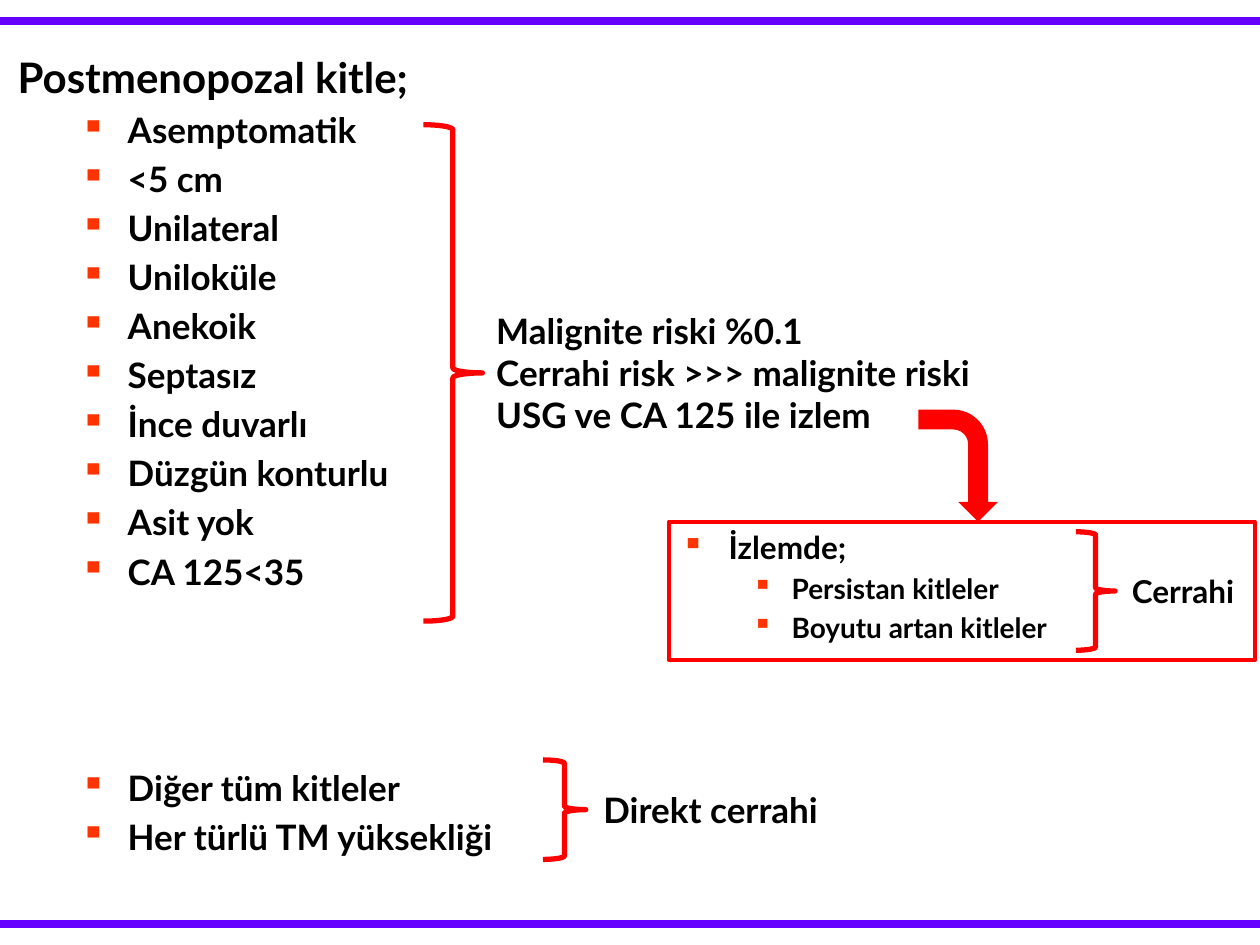
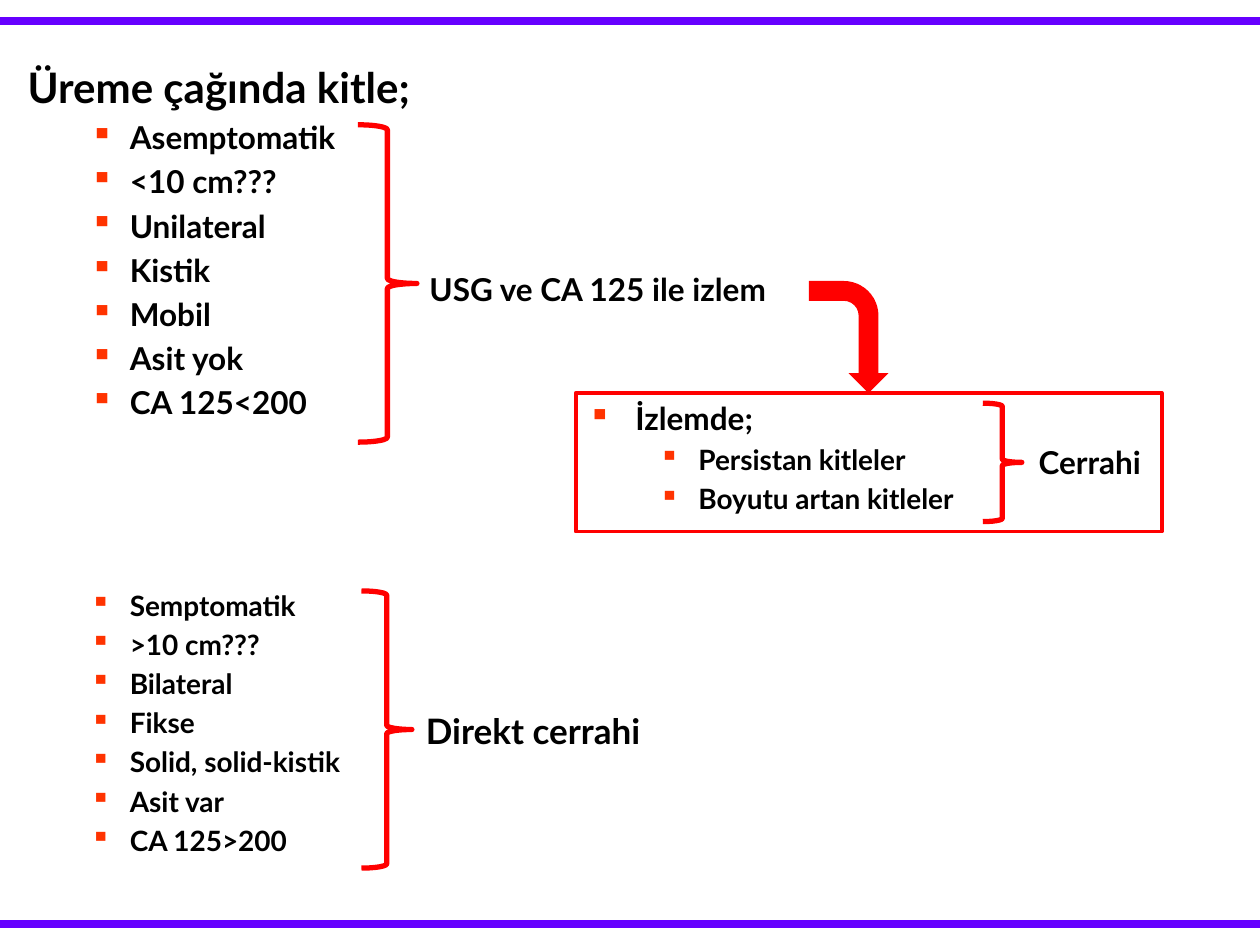
from lxml.etree import SubElement
from pptx import Presentation
from pptx.dml.color import RGBColor
from pptx.enum.shapes import MSO_CONNECTOR, MSO_SHAPE
from pptx.enum.text import MSO_ANCHOR, MSO_AUTO_SIZE, PP_ALIGN
from pptx.oxml.ns import qn
from pptx.util import Pt

SLIDE_WIDTH, SLIDE_HEIGHT = 720, 540
BAND, ACCENT, BULLET, INK = "6600FF", "FF0000", "FF3300", "000000"
TITLE_SIZE = 24
FRAME_FORMAT = {
    "word_wrap": True,
    "auto_size": MSO_AUTO_SIZE.NONE,
    "vertical_anchor": MSO_ANCHOR.TOP,
    "margin_left": Pt(7.2),
    "margin_right": Pt(7.2),
    "margin_top": Pt(3.6),
    "margin_bottom": Pt(3.6),
}
FONT_FORMAT = {"name": "Lato", "bold": True}


def colour(hex_value):
    return RGBColor.from_string(hex_value)


def apply(target, values):
    for name, value in values.items():
        setattr(target, name, value)


def points(*lengths):
    return [Pt(length) for length in lengths]


def write(paragraph, text, size):
    run = paragraph.add_run()
    run.text = text
    apply(run.font, {**FONT_FORMAT, "size": Pt(size)})
    run.font.color.rgb = colour(INK)
    paragraph.alignment = PP_ALIGN.LEFT


def add_bullet(paragraph, indent, hanging):
    properties = paragraph._p.get_or_add_pPr()
    properties.set("marL", str(Pt(indent)))
    properties.set("indent", str(-Pt(hanging)))
    bullet_colour = SubElement(properties, qn("a:buClr"))
    SubElement(bullet_colour, qn("a:srgbClr"), val=BULLET)
    SubElement(properties, qn("a:buChar"), char="▪")


def fill_lines(frame, lines):
    apply(frame, FRAME_FORMAT)
    for index, (text, size, level, bullet) in enumerate(lines):
        paragraph = frame.paragraphs[0] if index == 0 else frame.add_paragraph()
        write(paragraph, text, size)
        paragraph.level = level
        if bullet:
            paragraph.space_before = Pt(size * 0.2)
            add_bullet(paragraph, *bullet)


def add_bands(slide):
    for y in (12.2, SLIDE_HEIGHT - 12.2):
        band = slide.shapes.add_connector(
            MSO_CONNECTOR.STRAIGHT, *points(0, y, SLIDE_WIDTH, y))
        band.line.color.rgb = colour(BAND)
        band.line.width = Pt(4.5)
        SubElement(band._element.spPr, qn("a:effectLst"))


def add_title(slide, text, left, top, width):
    title = slide.shapes.title
    height = TITLE_SIZE * 1.2 + 7.2
    apply(title, dict(zip(("left", "top", "width", "height"),
                          points(left, top, width, height))))
    fill_lines(title.text_frame, [(text, TITLE_SIZE, 0, None)])


def add_list(slide, items, size, bullet, bounds):
    criteria = slide.shapes.add_textbox(*points(*bounds))
    fill_lines(criteria.text_frame, [(item, size, 0, bullet) for item in items])


def add_label(slide, lines, size, bounds):
    label = slide.shapes.add_textbox(*points(*bounds))
    fill_lines(label.text_frame, [(line, size, 0, None) for line in lines])


def add_outline(slide, preset, bounds, weight):
    outline = slide.shapes.add_shape(preset, *points(*bounds))
    outline.shadow.inherit = False
    outline.fill.background()
    outline.line.color.rgb = colour(ACCENT)
    outline.line.width = Pt(weight)
    return outline


def add_brace(slide, bounds):
    add_outline(slide, MSO_SHAPE.RIGHT_BRACE, bounds, 3)


def add_follow_up(slide, left, top):
    follow_up = add_outline(slide, MSO_SHAPE.RECTANGLE, (left, top, 334.8, 79.2), 2.25)
    fill_lines(follow_up.text_frame, [
        ("İzlemde;", 18, 0, (27, 27)),
        ("Persistan kitleler", 16, 1, (63, 22.5)),
        ("Boyutu artan kitleler", 16, 1, (63, 22.5)),
    ])
    add_brace(slide, (left + 232.6, top + 5.8, 22.3, 67.7))
    add_label(slide, ["Cerrahi"], 18, (left + 257.4, top + 25.2, 79.2, 28.8))


def add_arrow(slide, left, top):
    arrow = slide.shapes.add_shape(MSO_SHAPE.BENT_ARROW, *points(left, top, 64.1, 45.4))
    arrow.rotation = 90
    arrow.shadow.inherit = False
    arrow.fill.solid()
    arrow.fill.fore_color.rgb = colour(ACCENT)
    arrow.line.fill.background()


def add_mass_slide(deck, title, left, top, width, watched, direct, arrow, follow_up):
    slide = deck.slides.add_slide(deck.slide_layouts[5])
    add_bands(slide)
    add_title(slide, title, left, top, width)
    list_top = top + TITLE_SIZE * 1.2 + watched["size"] * 0.2
    for group, group_top in ((watched, list_top), (direct, direct["top"])):
        add_list(slide, group["items"], group["size"], group["bullet"],
                 (left, group_top, width, group["bottom"] - group_top))
        add_brace(slide, group["brace"])
        add_label(slide, group["decision"], group["decision_size"], group["label"])
    add_follow_up(slide, *follow_up)
    add_arrow(slide, *arrow)


def main():
    deck = Presentation()
    deck.slide_width, deck.slide_height = points(SLIDE_WIDTH, SLIDE_HEIGHT)

    add_mass_slide(
        deck, "Postmenopozal kitle;", 2.9, 25.9, 669,
        watched={
            "items": ["Asemptomatik", "<5 cm", "Unilateral", "Uniloküle", "Anekoik",
                      "Septasız", "İnce duvarlı", "Düzgün konturlu", "Asit yok",
                      "CA 125<35"],
            "size": 20, "bullet": (63, 27), "bottom": 400,
            "brace": (241.9, 71.3, 33.8, 283.7),
            "decision": ["Malignite riski %0.1", "Cerrahi risk >>> malignite riski",
                         "USG ve CA 125 ile izlem"],
            "decision_size": 20, "label": (276.5, 173.5, 345.6, 80),
        },
        direct={
            "items": ["Diğer tüm kitleler", "Her türlü TM yüksekliği"],
            "size": 20, "bullet": (63, 27), "top": 434.2, "bottom": 501.9,
            "brace": (310.3, 434.2, 24.5, 56.9),
            "decision": ["Direkt cerrahi"],
            "decision_size": 20, "label": (337.7, 447.1, 160, 31.7),
        },
        arrow=(515.5, 243.4), follow_up=(382.3, 298.1))

    add_mass_slide(
        deck, "Üreme çağında kitle;", 8.6, 31.7, 459.4,
        watched={
            "items": ["Asemptomatik", "<10 cm???", "Unilateral", "Kistik", "Mobil",
                      "Asit yok", "CA 125<200"],
            "size": 18, "bullet": (58.5, 22.5), "bottom": 252.7,
            "brace": (204.5, 71.3, 33.8, 181.4),
            "decision": ["USG ve CA 125 ile izlem"],
            "decision_size": 18, "label": (238.3, 150.5, 235.4, 28.8),
        },
        direct={
            "items": ["Semptomatik", ">10 cm???", "Bilateral", "Fikse",
                      "Solid, solid-kistik", "Asit var", "CA 125>200"],
            "size": 16, "bullet": (58.5, 22.5), "top": 332.6, "bottom": 508.3,
            "brace": (206.6, 337.7, 28.8, 158.4),
            "decision": ["Direkt cerrahi"],
            "decision_size": 20, "label": (236.2, 401.8, 164.2, 31.7),
        },
        arrow=(452.9, 169.9), follow_up=(329, 224.6))

    deck.save("out.pptx")


if __name__ == "__main__":
    main()
